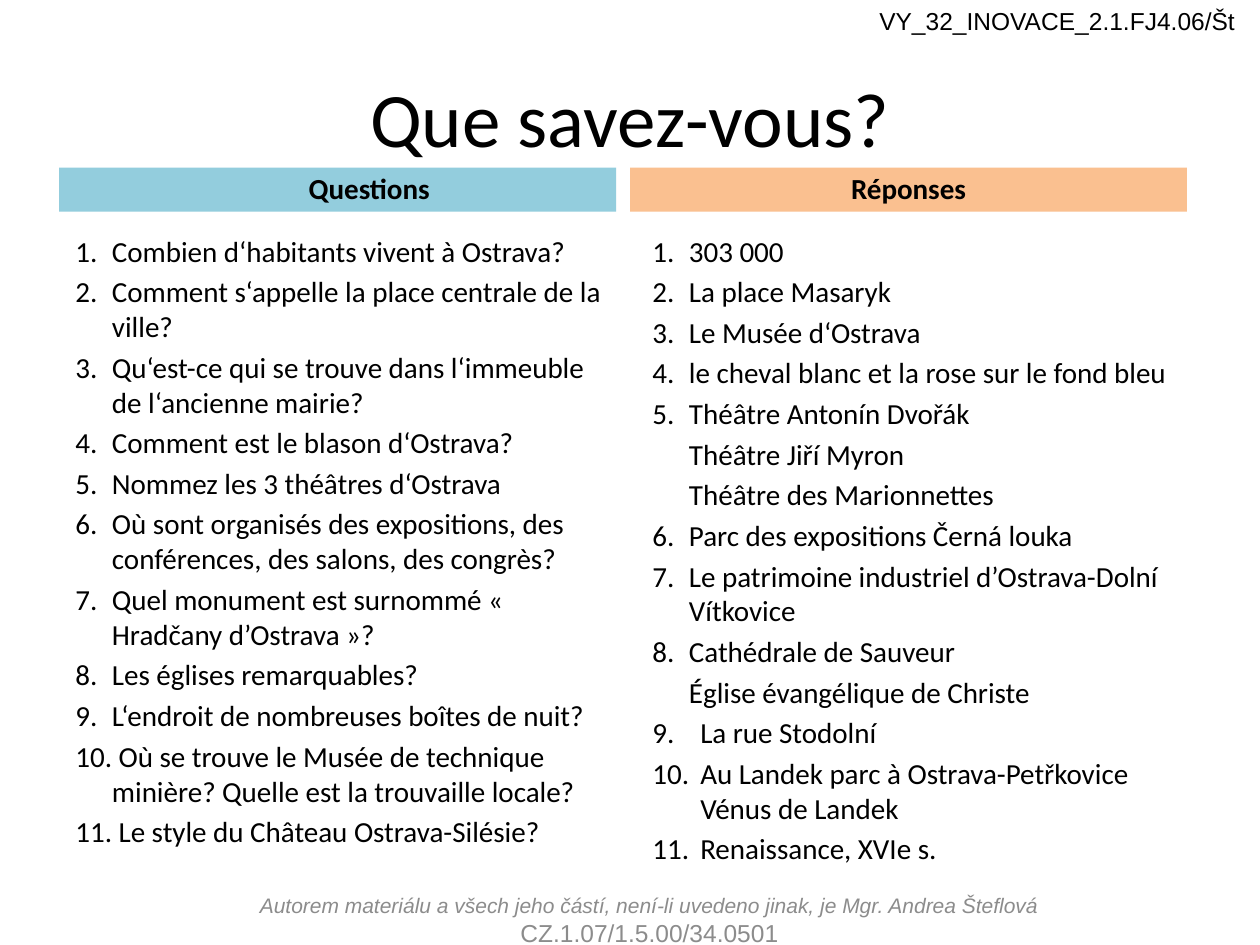
from pptx import Presentation, util as u
from pptx.dml.color import RGBColor
from pptx.enum import shapes, text
from pptx.oxml.ns import qn
from lxml import etree

BLACK = RGBColor(0x00, 0x00, 0x00)
GRAY = RGBColor(0x8C, 0x8C, 0x8C)
BLUE = RGBColor(0x93, 0xCD, 0xDD)
PEACH = RGBColor(0xFA, 0xC0, 0x90)

MID = text.MSO_ANCHOR.MIDDLE
LOW = text.MSO_ANCHOR.BOTTOM
TOP = text.MSO_ANCHOR.TOP
CENTER = text.PP_ALIGN.CENTER

HEAD = dict(name="Calibri", size=u.Pt(44))
BODY = dict(name="Calibri", size=u.Pt(16.6))
BOLD = dict(BODY, bold=True)
CODE = dict(name="Arial", size=u.Pt(14))
NOTE = dict(name="Arial", size=u.Pt(12), italic=True)
GAP = u.Pt(3.3)
STEP = 0.29
WIDE = 0.38

ASKS = [
    "Combien d‘habitants vivent à Ostrava?",
    "Comment s‘appelle la place centrale de la ville?",
    "Qu‘est-ce qui se trouve dans l‘immeuble de l‘ancienne mairie?",
    "Comment est le blason d‘Ostrava?",
    "Nommez les 3 théâtres d‘Ostrava",
    "Où sont organisés des expositions, des conférences, des salons, des congrès?",
    "Quel monument est surnommé « Hradčany d’Ostrava »?",
    "Les églises remarquables?",
    "L‘endroit de nombreuses boîtes de nuit?",
    " Où se trouve le Musée de technique minière? Quelle est la trouvaille locale?",
    " Le style du Château Ostrava-Silésie?",
]
REPLIES = [
    (1, STEP, ["303 000", "La place Masaryk", "Le Musée d‘Ostrava",
               "le cheval blanc et la rose sur le fond bleu",
               "Théâtre Antonín Dvořák"]),
    (None, STEP, ["Théâtre Jiří Myron", "Théâtre des Marionnettes"]),
    (6, STEP, ["Parc des expositions Černá louka",
               "Le patrimoine industriel d’Ostrava-Dolní Vítkovice",
               "Cathédrale de Sauveur"]),
    (None, STEP, ["Église évangélique de Christe"]),
    (9, WIDE, ["La rue Stodolní",
               "Au Landek parc à Ostrava-Petřkovice Vénus de Landek",
               "Renaissance, XVIe s."]),
]


class Deck:
    def __init__(self):
        self.prs = Presentation()
        self.prs.slide_width = u.Inches(10)
        self.prs.slide_height = u.Inches(7.5)
        self.slide = self.prs.slides.add_slide(self.prs.slide_layouts[5])

    def frame(self, shape, anchor):
        frame = shape.text_frame
        frame.word_wrap = True
        frame.auto_size = text.MSO_AUTO_SIZE.NONE
        frame.vertical_anchor = anchor
        return frame

    def put(self, para, words, style, color=BLACK, align=None):
        para.alignment = align
        run = para.add_run()
        run.text = words
        for key, value in style.items():
            setattr(run.font, key, value)
        run.font.color.rgb = color

    def indent(self, para, left, first):
        props = para._p.get_or_add_pPr()
        props.set("marL", str(u.Inches(left)))
        props.set("indent", str(u.Inches(first)))
        return props

    def title(self, words, *box):
        shape = self.slide.shapes.title
        for key, value in zip(("left", "top", "width", "height"), box):
            setattr(shape, key, u.Inches(value))
        self.put(self.frame(shape, MID).paragraphs[0], words, HEAD, align=CENTER)

    def band(self, words, left, fill, inset=0):
        shape = self.slide.shapes.add_shape(
            shapes.MSO_SHAPE.RECTANGLE,
            *map(u.Inches, (left, 1.33, 4.42, 0.35)))
        shape.shadow.inherit = False
        shape.fill.solid()
        shape.fill.fore_color.rgb = fill
        shape.line.fill.background()
        para = self.frame(shape, LOW).paragraphs[0]
        if inset:
            self.indent(para, inset, -STEP)
        self.put(para, words, BOLD, align=CENTER)

    def box(self, anchor, *box):
        shape = self.slide.shapes.add_textbox(*map(u.Inches, box))
        return self.frame(shape, anchor)

    def label(self, lines, color, anchor, align, *box):
        frame = self.box(anchor, *box)
        for i, (words, style) in enumerate(lines):
            para = frame.add_paragraph() if i else frame.paragraphs[0]
            self.put(para, words, style, color, align)

    def items(self, groups, *box):
        frame = self.box(TOP, *box)
        rows = [(start, left, words)
                for start, left, group in groups for words in group]
        for i, (start, left, words) in enumerate(rows):
            para = frame.add_paragraph() if i else frame.paragraphs[0]
            if i:
                para.space_before = GAP
            props = self.indent(para, left, -left if start else 0)
            if start:
                mark = etree.SubElement(props, qn("a:buAutoNum"), type="arabicPeriod")
                if start > 1:
                    mark.set("startAt", str(start))
            self.put(para, words, BODY)


def main():
    deck = Deck()
    deck.title("Que savez-vous?", 0.5, 0.3, 9, 1.25)
    deck.band("Questions", 0.47, BLUE, 0.79)
    deck.items([(1, STEP, ASKS)], 0.5, 1.8, 4.42, 5.26)
    deck.band("Réponses", 5, PEACH)
    deck.items(REPLIES, 5.08, 1.8, 4.53, 5.26)
    deck.label([("VY_32_INOVACE_2.1.FJ4.06/Št", CODE)],
               BLACK, TOP, None, 6.88, 0, 3.12, 0.34)
    deck.label([("Autorem materiálu a všech jeho částí, není-li uvedeno jinak, "
                 "je Mgr. Andrea Šteflová", NOTE),
                ("CZ.1.07/1.5.00/34.0501", CODE)],
               GRAY, MID, CENTER, 1.95, 7.1, 6.41, 0.4)
    deck.prs.save("out.pptx")


if __name__ == "__main__":
    main()
